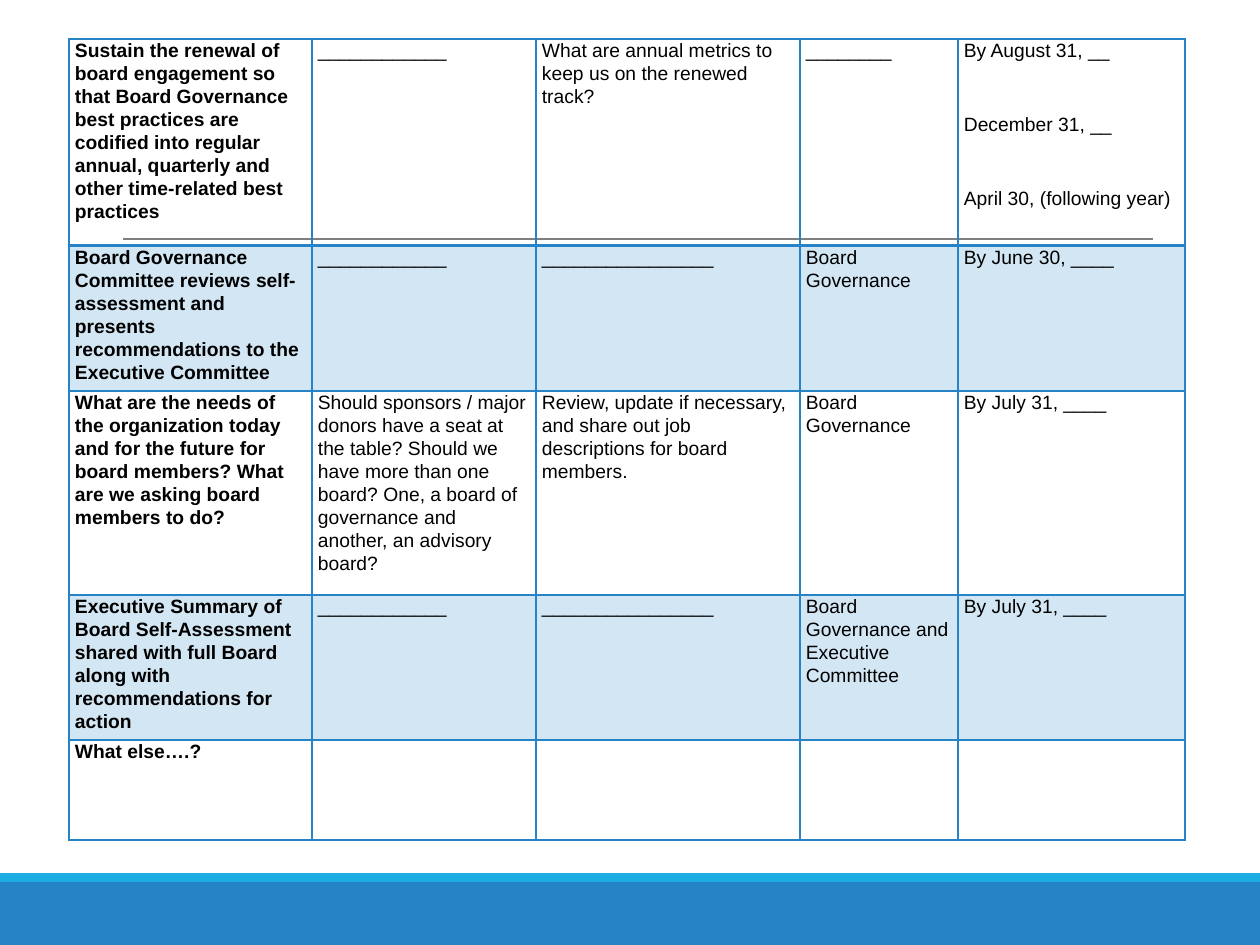
"""Build the board governance action plan slide."""
from lxml import etree
from pptx import Presentation
from pptx.dml.color import RGBColor
from pptx.enum.shapes import MSO_CONNECTOR, MSO_SHAPE
from pptx.oxml.ns import qn
from pptx.util import Pt

RECTANGLE = MSO_SHAPE.RECTANGLE
STRAIGHT = MSO_CONNECTOR.STRAIGHT
EMU_PER_PX = 914400 / 126
BLUE, SKY, GRAY, BLACK = "2683C6", "1CADE4", "7F7F7F", "000000"

COLUMN_WIDTHS = [243, 224, 264, 158, 227]
ROW_HEIGHTS = [207, 145, 204, 145, 100]
SHORT_BLANK, BLANK, LONG_BLANK = "_" * 8, "_" * 12, "_" * 16
PLAN = [
    ["Sustain the renewal of board engagement so that Board Governance best practices "
     "are codified into regular annual, quarterly and other time-related best practices",
     BLANK, "What are annual metrics to keep us on the renewed track?", SHORT_BLANK,
     "By August 31, __\nDecember 31, __\nApril 30, (following year)"],
    ["Board Governance Committee reviews self-assessment and presents recommendations "
     "to the Executive Committee",
     BLANK, LONG_BLANK, "Board Governance", "By June 30, ____"],
    ["What are the needs of the organization today and for the future for board members? "
     "What are we asking board members to do?",
     "Should sponsors / major donors have a seat at the table? Should we have more than "
     "one board? One, a board of governance and another, an advisory board?",
     "Review, update if necessary, and share out job descriptions for board members.",
     "Board Governance", "By July 31, ____"],
    ["Executive Summary of Board Self-Assessment shared with full Board along with "
     "recommendations for action",
     BLANK, LONG_BLANK, "Board Governance and Executive Committee", "By July 31, ____"],
    ["What else….?", "", "", "", ""],
]


def px(length):
    return round(length * EMU_PER_PX)


def rgb(color):
    return RGBColor.from_string(color)


class PlanSlide:
    """Holds the text style and the slide being built."""

    font, size, line_spacing = "Arial", 11, 1.07
    paragraph_gap, date_gap = 8, 29

    def __init__(self, slide):
        self.slide = slide

    def band(self, top, height, color):
        band = self.slide.shapes.add_shape(RECTANGLE, 0, px(top), px(1260), px(height))
        band.shadow.inherit = False
        band.fill.solid()
        band.fill.fore_color.rgb = rgb(color)
        band.line.fill.background()

    def rule(self, left, right, y, color):
        rule = self.slide.shapes.add_connector(STRAIGHT, px(left), px(y), px(right), px(y))
        rule.line.color.rgb = rgb(color)
        rule.line.width = Pt(0.75)
        etree.SubElement(rule._element.spPr, qn("a:effectLst"))

    def table(self, left, top, widths, heights, rows):
        frame = self.slide.shapes.add_table(
            len(rows), len(widths), px(left), px(top), px(sum(widths)), px(sum(heights)))
        grid = frame.table
        grid.first_row = grid.horz_banding = False
        for column, width in zip(grid.columns, widths):
            column.width = px(width)
        for r, (row, height) in enumerate(zip(rows, heights)):
            grid.rows[r].height = px(height)
            for c, text in enumerate(row):
                cell = grid.cell(r, c)
                self.borders(cell, top=2 if r == 1 else 1, bottom=2 if r == 0 else 1)
                self.tint(cell, r % 2 == 1)
                self.cell_text(cell, text, bold=c == 0)

    def borders(self, cell, top, bottom):
        properties = cell._tc.get_or_add_tcPr()
        for side, width in (("L", 1), ("R", 1), ("T", top), ("B", bottom)):
            edge = etree.SubElement(properties, qn(f"a:ln{side}"), w=str(Pt(width)))
            paint = etree.SubElement(edge, qn("a:solidFill"))
            etree.SubElement(paint, qn("a:srgbClr"), val=BLUE)

    def tint(self, cell, shaded):
        if not shaded:
            cell.fill.background()
            return
        cell.fill.solid()
        cell.fill.fore_color.rgb = rgb(BLUE)
        color = cell._tc.tcPr.find(qn("a:solidFill")).find(qn("a:srgbClr"))
        etree.SubElement(color, qn("a:alpha"), val="20000")

    def cell_text(self, cell, text, bold):
        cell.margin_left = cell.margin_right = px(6)
        cell.margin_top = cell.margin_bottom = 0
        if not text:
            return
        lines = text.split("\n")
        for i, line in enumerate(lines):
            frame = cell.text_frame
            paragraph = frame.add_paragraph() if i else frame.paragraphs[0]
            paragraph.line_spacing = self.line_spacing
            last = i == len(lines) - 1
            paragraph.space_after = Pt(self.paragraph_gap if last else self.date_gap)
            run = paragraph.add_run()
            run.text = line
            run.font.name = self.font
            run.font.size = Pt(self.size)
            run.font.bold = bold
            run.font.color.rgb = rgb(BLACK)


def main():
    deck = Presentation()
    deck.slide_width, deck.slide_height = px(1260), px(945)
    plan = PlanSlide(deck.slides.add_slide(deck.slide_layouts[6]))
    plan.band(882, 63, BLUE)
    plan.band(873, 9, SKY)
    plan.rule(123, 1153, 239, GRAY)
    plan.table(69, 39, COLUMN_WIDTHS, ROW_HEIGHTS, PLAN)
    deck.save("out.pptx")


if __name__ == "__main__":
    main()
